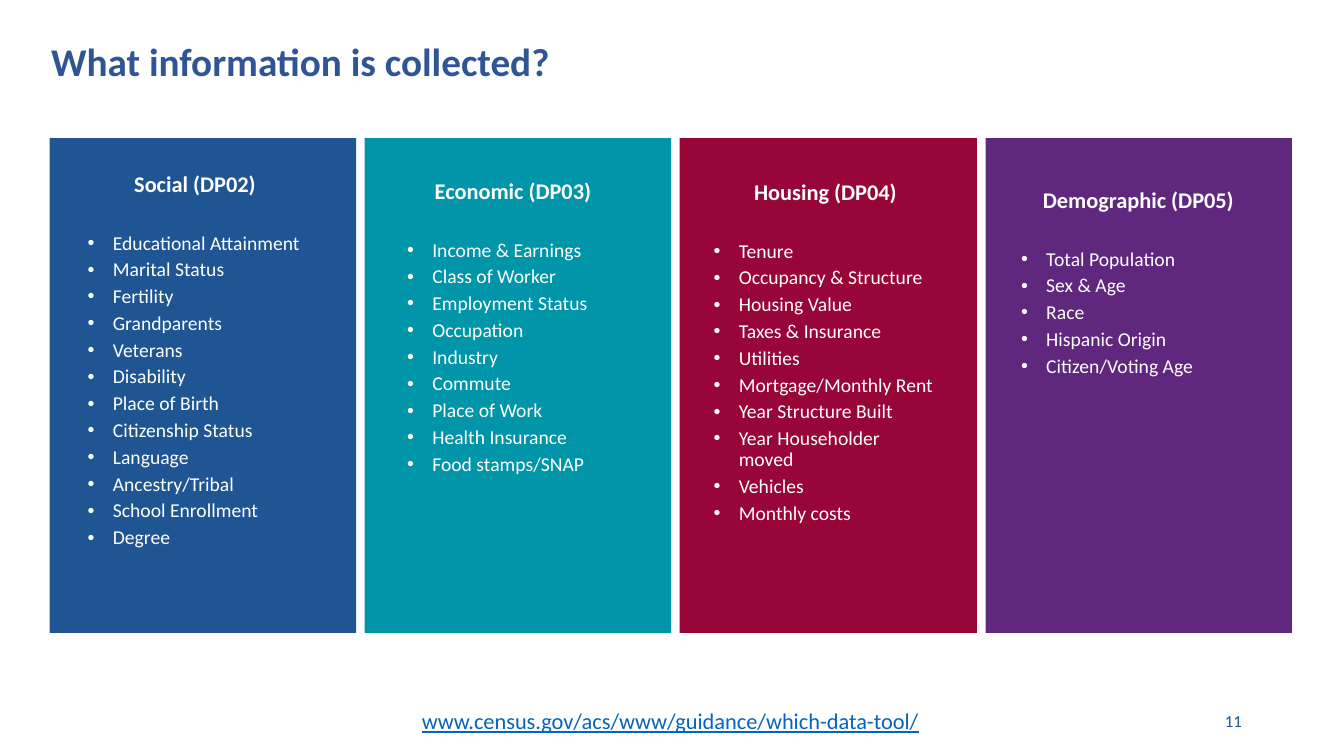
"""Build a slide listing the survey topics in four coloured columns."""
import pptx
import pptx.dml.color
import pptx.enum.shapes
import pptx.enum.text
import pptx.oxml.ns
import pptx.util
from lxml import etree

Pt = pptx.util.Pt
Align = pptx.enum.text.PP_ALIGN
Anchor = pptx.enum.text.MSO_ANCHOR


def hex_color(value):
    return pptx.dml.color.RGBColor.from_string(value)


def add_text(shapes, text, left, top, width, height, size=14, color="FFFFFF",
             bold=False, underline=False, align=Align.LEFT, anchor=Anchor.TOP,
             line_spacing=1.0, inset=None, bullets=()):
    box = shapes.add_textbox(Pt(left), Pt(top), Pt(width), Pt(height))
    frame = box.text_frame
    frame.word_wrap = True
    frame.vertical_anchor = anchor
    if inset is not None:
        frame.margin_left = frame.margin_right = Pt(inset)
        frame.margin_top = frame.margin_bottom = Pt(inset)
    for index, line in enumerate([text, *bullets]):
        para = frame.paragraphs[0] if index == 0 else frame.add_paragraph()
        para.line_spacing = line_spacing
        if index == 0:
            para.alignment = align
        else:
            para.alignment = Align.LEFT
            para.space_before = Pt(25.4 if index == 1 else 4)
            properties = para._p.get_or_add_pPr()
            properties.set("marL", str(Pt(18)))
            properties.set("indent", str(-Pt(18)))
            font = etree.SubElement(properties, pptx.oxml.ns.qn("a:buFont"))
            font.set("typeface", "Arial")
            mark = etree.SubElement(properties, pptx.oxml.ns.qn("a:buChar"))
            mark.set("char", "•")
        span = para.add_run()
        span.text = line
        span.font.name = "Calibri"
        span.font.size = Pt(size if index == 0 else 14)
        span.font.bold = bold and index == 0
        span.font.underline = underline
        span.font.color.rgb = hex_color(color)


deck = pptx.Presentation()
deck.slide_width = Pt(960)
deck.slide_height = Pt(540)
page = deck.slides.add_slide(deck.slide_layouts[6])

add_text(page.shapes, "What information is collected?", 29.5, 28.8, 566.6, 33.8,
         size=28, color="2F5597", bold=True, anchor=Anchor.MIDDLE, line_spacing=0.9)

columns = [
    ("Social (DP02)", "1F5593", 218.9, (54, 115.2, 170.6, 288.7),
     ["Educational Attainment", "Marital Status", "Fertility", "Grandparents",
      "Veterans", "Disability", "Place of Birth", "Citizenship Status",
      "Language", "Ancestry/Tribal", "School Enrollment", "Degree"]),
    ("Economic (DP03)", "0095A8", 218.9, (282.2, 120.2, 168.5, 269.3),
     ["Income & Earnings", "Class of Worker", "Employment Status", "Occupation",
      "Industry", "Commute", "Place of Work", "Health Insurance",
      "Food stamps/SNAP"]),
    ("Housing (DP04)", "980539", 212.4, (501.1, 121, 177.1, 284.4),
     ["Tenure", "Occupancy & Structure", "Housing Value", "Taxes & Insurance",
      "Utilities", "Mortgage/Monthly Rent", "Year Structure Built",
      "Year Householder moved", "Vehicles", "Monthly costs"]),
    ("Demographic (DP05)", "5F277E", 218.9, (720.7, 126.7, 185, 153.4),
     ["Total Population", "Sex & Age", "Race", "Hispanic Origin",
      "Citizen/Voting Age"]),
]

column_left = 35.5
column_gap = 6.1
for heading, fill, column_width, text_area, topics in columns:
    group = page.shapes.add_group_shape()
    panel = group.shapes.add_shape(
        pptx.enum.shapes.MSO_SHAPE.RECTANGLE,
        Pt(column_left), Pt(98.6), Pt(column_width), Pt(353.5))
    panel.shadow.inherit = False
    panel.fill.solid()
    panel.fill.fore_color.rgb = hex_color(fill)
    panel.line.fill.background()
    add_text(group.shapes, heading, *text_area, size=16, bold=True,
             align=Align.CENTER, line_spacing=0.9, inset=8.64, bullets=topics)
    column_left += column_width + column_gap

add_text(page.shapes, "11", 678.2, 500.4, 216, 28.8, size=12, color="1F5593",
         align=Align.RIGHT, anchor=Anchor.MIDDLE)
add_text(page.shapes, "www.census.gov/acs/www/guidance/which-data-tool/",
         286.6, 501.8, 384.5, 26.6, size=16, color="0563C1", underline=True,
         align=Align.CENTER)

deck.save("out.pptx")
